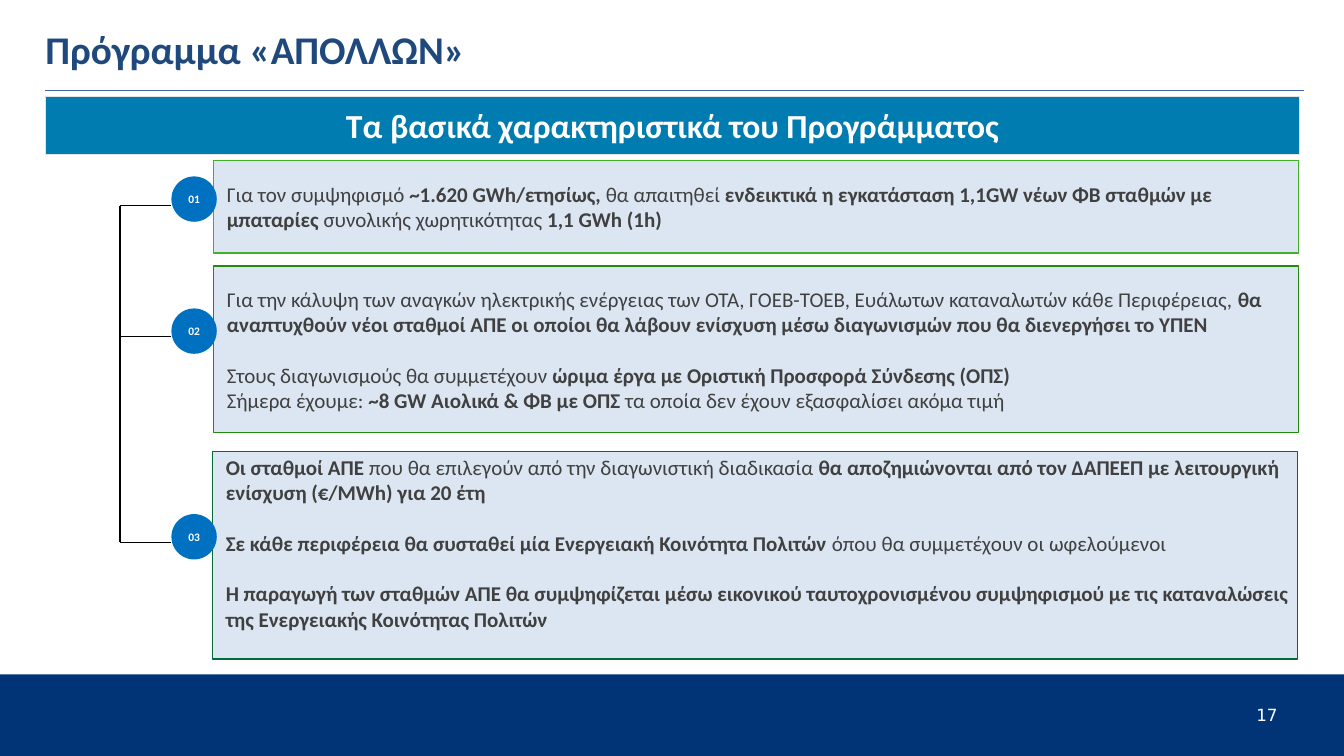
from lxml import etree
from pptx import Presentation
from pptx.dml.color import RGBColor
from pptx.enum.shapes import MSO_CONNECTOR, MSO_SHAPE
from pptx.enum.text import MSO_ANCHOR, PP_ALIGN
from pptx.oxml.ns import qn
from pptx.util import Inches, Pt

RECTANGLE, OVAL = MSO_SHAPE.RECTANGLE, MSO_SHAPE.OVAL
STRAIGHT = MSO_CONNECTOR.STRAIGHT
MIDDLE = MSO_ANCHOR.MIDDLE
LEFT, CENTER = PP_ALIGN.LEFT, PP_ALIGN.CENTER

COLORS = {
    "navy": "003476", "rule": "4966AC", "banner": "007CB0", "banner_edge": "E3E3E2",
    "title": "1F497D", "panel": "DCE6F2", "badge": "0070C0", "body": "404040",
    "white": "FFFFFF", "black": "000000",
    "light_green": "43B02A", "green": "26890D", "dark_green": "046A38",
}

TITLE = "Πρόγραμμα «ΑΠΟΛΛΩΝ»"
BANNER = "Τα βασικά χαρακτηριστικά του Προγράμματος"
PAGE_NUMBER = "17"

# Each paragraph: (starts a new block, [(text, bold), ...])
PANELS = [
    {"left": 2.12, "top": 1.59, "height": 0.92, "edge": "light_green",
     "badge_top": 1.75, "branch": 2.04, "bottom_inset": 0.04,
     "paragraphs": [
         (False, [("Για τον συμψηφισμό ", False), ("~1.620 GWh/ετησίως, ", True),
                  ("θα απαιτηθεί", False),
                  (" ενδεικτικά η εγκατάσταση 1,1GW νέων ΦΒ σταθμών με μπαταρίες ", True),
                  ("συνολικής χωρητικότητας ", False), ("1,1 GWh (1h)", True)]),
     ]},
    {"left": 2.12, "top": 2.64, "height": 1.65, "edge": "green",
     "badge_top": 3.06, "branch": 3.34, "bottom_inset": 0.04,
     "paragraphs": [
         (False, [("Για την κάλυψη των αναγκών ηλεκτρικής ενέργειας των ΟΤΑ, ΓΟΕΒ-ΤΟΕΒ, "
                   "Ευάλωτων καταναλωτών κάθε Περιφέρειας, ", False),
                  ("θα αναπτυχθούν νέοι σταθμοί ΑΠΕ οι οποίοι θα λάβουν ενίσχυση μέσω "
                   "διαγωνισμών που θα διενεργήσει το ΥΠΕΝ", True)]),
         (True, [("Στους διαγωνισμούς θα συμμετέχουν ", False),
                 ("ώριμα έργα με Οριστική Προσφορά Σύνδεσης (ΟΠΣ)", True)]),
         (False, [("Σήμερα έχουμε:", False), (" ~8 GW Αιολικά & ΦΒ με ΟΠΣ ", True),
                  ("τα οποία δεν έχουν εξασφαλίσει ακόμα τιμή", False)]),
     ]},
    {"left": 2.11, "top": 4.48, "height": 2.06, "edge": "dark_green",
     "badge_top": 5.1, "branch": 5.38, "bottom_inset": 0.29,
     "paragraphs": [
         (False, [("Οι σταθμοί ΑΠΕ ", True),
                  ("που θα επιλεγούν από την διαγωνιστική διαδικασία ", False),
                  ("θα αποζημιώνονται από τον ΔΑΠΕΕΠ με λειτουργική ενίσχυση (€/MWh) "
                   "για 20 έτη", True)]),
         (True, [("Σε κάθε περιφέρεια θα συσταθεί μία Ενεργειακή Κοινότητα Πολιτών ", True),
                 ("όπου θα συμμετέχουν οι ωφελούμενοι", False)]),
         (True, [("Η παραγωγή των σταθμών ΑΠΕ θα συμψηφίζεται μέσω εικονικού "
                  "ταυτοχρονισμένου συμψηφισμού με τις καταναλώσεις της Ενεργειακής "
                  "Κοινότητας Πολιτών", True)]),
     ]},
]

SLIDE_WIDTH, SLIDE_HEIGHT = 13.33, 7.5
MARGIN, CONTENT_WIDTH = 0.45, 12.44
PANEL_WIDTH = 10.76
BADGE_LEFT, BADGE_SIZE = 1.7, 0.45
TRUNK_X = 1.19
FOOTER_TOP = 6.69
BLOCK_GAP = 18.3


def rgb(name):
    return RGBColor.from_string(COLORS[name])


def add_box(slide, kind, left, top, width, height, fill, edge=None, edge_width=1):
    shape = slide.shapes.add_shape(kind, Inches(left), Inches(top), Inches(width), Inches(height))
    shape.shadow.inherit = False
    shape.fill.solid()
    shape.fill.fore_color.rgb = rgb(fill)
    if edge:
        shape.line.color.rgb = rgb(edge)
        shape.line.width = Pt(edge_width)
    else:
        shape.line.fill.background()
    return shape


def set_frame(shape, insets=(0, 0, 0, 0), anchor=MIDDLE):
    """Set insets (left, top, right, bottom), wrapping and anchor of a text frame."""
    frame = shape.text_frame
    frame.word_wrap = True
    frame.vertical_anchor = anchor
    frame.margin_left, frame.margin_top, frame.margin_right, frame.margin_bottom = map(Inches, insets)
    return frame


def add_run(paragraph, text, size, color, bold=False, font="Calibri"):
    run = paragraph.add_run()
    run.text = text
    run.font.name = font
    run.font.size = Pt(size)
    run.font.bold = bold
    run.font.color.rgb = rgb(color)


def add_line(slide, start, end, color="black", width=1):
    line = slide.shapes.add_connector(STRAIGHT, *map(Inches, start + end))
    line.line.color.rgb = rgb(color)
    line.line.width = Pt(width)
    etree.SubElement(line._element.spPr, qn("a:effectLst"))


def add_panel(slide, number, panel):
    box = add_box(slide, RECTANGLE, panel["left"], panel["top"], PANEL_WIDTH,
                  panel["height"], "panel", panel["edge"])
    frame = set_frame(box, (0.13, 0.04, 0.06, panel["bottom_inset"]))
    for index, (new_block, runs) in enumerate(panel["paragraphs"]):
        paragraph = frame.add_paragraph() if index else frame.paragraphs[0]
        paragraph.alignment = LEFT
        if new_block:
            paragraph.space_before = Pt(BLOCK_GAP)
        for text, bold in runs:
            add_run(paragraph, text, 15, "body", bold)

    badge = add_box(slide, OVAL, BADGE_LEFT, panel["badge_top"], BADGE_SIZE, BADGE_SIZE, "badge")
    label = set_frame(badge).paragraphs[0]
    label.alignment = CENTER
    add_run(label, f"{number:02d}", 8.2, "white", True)
    add_line(slide, (TRUNK_X, panel["branch"]), (BADGE_LEFT, panel["branch"]))


def main():
    presentation = Presentation()
    presentation.slide_width = Inches(SLIDE_WIDTH)
    presentation.slide_height = Inches(SLIDE_HEIGHT)
    slide = presentation.slides.add_slide(presentation.slide_layouts[5])

    title = slide.shapes.title
    title.left, title.top, title.width, title.height = map(Inches, (MARGIN, 0.19, CONTENT_WIDTH, 0.58))
    heading = set_frame(title).paragraphs[0]
    heading.alignment = LEFT
    add_run(heading, TITLE, 28, "title", True)

    add_box(slide, RECTANGLE, 0, FOOTER_TOP, SLIDE_WIDTH, SLIDE_HEIGHT - FOOTER_TOP, "navy")
    add_line(slide, (MARGIN, 0.9), (12.93, 0.9), "rule", 0.96)

    banner = add_box(slide, RECTANGLE, MARGIN, 0.96, CONTENT_WIDTH, 0.57, "banner", "banner_edge", 0.75)
    caption = set_frame(banner, (0.1, 0.08, 0.1, 0.08)).paragraphs[0]
    caption.alignment = CENTER
    add_run(caption, BANNER, 24, "white", True)

    for number, panel in enumerate(PANELS, 1):
        add_panel(slide, number, panel)
    add_line(slide, (TRUNK_X, PANELS[0]["branch"]), (TRUNK_X, PANELS[-1]["branch"]))

    page_box = slide.shapes.add_textbox(*map(Inches, (12.42, 7.02, 0.46, 0.14)))
    page = set_frame(page_box, (0.04, 0, 0, 0), MSO_ANCHOR.TOP).paragraphs[0]
    page.line_spacing = 0.87
    add_run(page, PAGE_NUMBER, 12, "white", font="DejaVu Sans")

    presentation.save("out.pptx")


if __name__ == "__main__":
    main()
